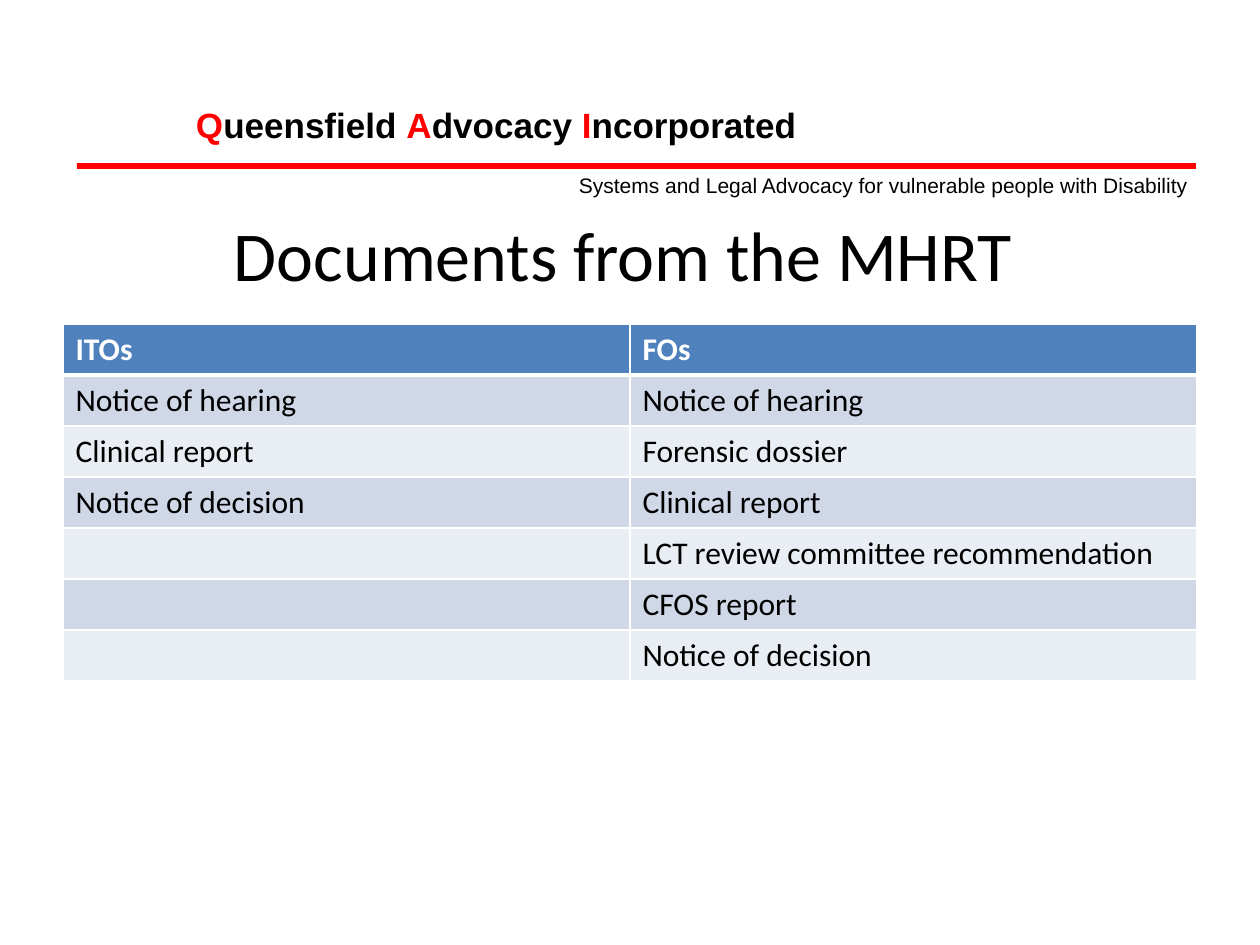
"""Build the slide listing the documents issued by the MHRT."""
from lxml.etree import SubElement
from pptx import Presentation
from pptx.dml.color import RGBColor
from pptx.enum.shapes import MSO_SHAPE as SHAPE
from pptx.enum.text import MSO_ANCHOR as ANCHOR, PP_ALIGN as ALIGN
from pptx.oxml.ns import qn
from pptx.util import Pt

PX = 914400 // 126
RED, BLACK, WHITE = "FF0000", "000000", "FFFFFF"
HEADER_FILL, BANDS = "4F81BD", ("D0D8E8", "E9EDF4")

ORGANISATION = [("Q", RED), ("ueensfield ", BLACK), ("A", RED), ("dvocacy ", BLACK),
                ("I", RED), ("ncorporated", BLACK)]
TAGLINE = "Systems and Legal Advocacy for vulnerable people with Disability"
TITLE = "Documents from the MHRT "
DOCUMENTS = [
    ("ITOs", "FOs"),
    ("Notice of hearing", "Notice of hearing"),
    ("Clinical report", "Forensic dossier"),
    ("Notice of decision", "Clinical report"),
    ("", "LCT review committee recommendation"),
    ("", "CFOS report"),
    ("", "Notice of decision"),
]
TABLE_LEFT, TABLE_TOP, COLUMN_WIDTH, ROW_HEIGHT = 63, 324, 567, 51


def px(*lengths):
    return [length * PX for length in lengths]


def paint(target, color):
    target.fill.solid()
    target.fill.fore_color.rgb = RGBColor.from_string(color)


def write(frame, text, size, font="Calibri", color=BLACK, bold=False,
          align=ALIGN.LEFT, anchor=ANCHOR.TOP, inset=None, after=0):
    """Fill a text frame with a string or a list of (string, colour) runs."""
    frame.word_wrap = True
    frame.vertical_anchor = anchor
    if inset is not None:
        frame.margin_left = frame.margin_right = inset * PX
        frame.margin_top = frame.margin_bottom = inset * PX
    paragraph = frame.paragraphs[0]
    paragraph.alignment = align
    paragraph.space_after = Pt(after)
    for part, part_color in [(text, color)] if isinstance(text, str) else text:
        run = paragraph.add_run()
        run.text = part
        run.font.name, run.font.size, run.font.bold = font, Pt(size), bold
        run.font.color.rgb = RGBColor.from_string(part_color)


def add_rectangle(slide, place, color):
    rectangle = slide.shapes.add_shape(SHAPE.RECTANGLE, *px(*place))
    rectangle.shadow.inherit = False
    rectangle.line.fill.background()
    paint(rectangle, color)
    return rectangle


def add_borders(cell, **widths):
    properties = cell._tc.get_or_add_tcPr()
    for side in "LRTB":
        border = SubElement(properties, qn(f"a:ln{side}"), w=str(Pt(widths.get(side, 1))))
        fill = SubElement(border, qn("a:solidFill"))
        SubElement(fill, qn("a:srgbClr"), val=WHITE)


def add_documents(slide):
    rows, columns = len(DOCUMENTS), len(DOCUMENTS[0])
    place = px(TABLE_LEFT, TABLE_TOP, columns * COLUMN_WIDTH, rows * ROW_HEIGHT)
    table = slide.shapes.add_table(rows, columns, *place).table
    for r, names in enumerate(DOCUMENTS):
        header = r == 0
        borders = {0: {"B": 3}, 1: {"T": 3}}.get(r, {})
        for c, name in enumerate(names):
            cell = table.cell(r, c)
            add_borders(cell, **borders)
            paint(cell, HEADER_FILL if header else BANDS[(r - 1) % 2])
            if name:
                write(cell.text_frame, name, 18, bold=header,
                      color=WHITE if header else BLACK)


def main():
    deck = Presentation()
    deck.slide_width, deck.slide_height = px(1260, 945)
    slide = deck.slides.add_slide(deck.slide_layouts[6])

    organisation = add_rectangle(slide, (191, 98, 625, 56), WHITE)
    write(organisation.text_frame, ORGANISATION, 20, font="Arial", bold=True,
          inset=5, after=10)
    add_rectangle(slide, (77, 163, 1119, 6), RED)
    tagline = slide.shapes.add_textbox(*px(574, 168, 672, 27))
    write(tagline.text_frame, TAGLINE, 12, font="Arial", inset=5, after=10)
    title = slide.shapes.add_textbox(*px(64, 204, 1134, 100))
    write(title.text_frame, TITLE, 40, align=ALIGN.CENTER, anchor=ANCHOR.MIDDLE)
    add_documents(slide)
    deck.save("out.pptx")


if __name__ == "__main__":
    main()
